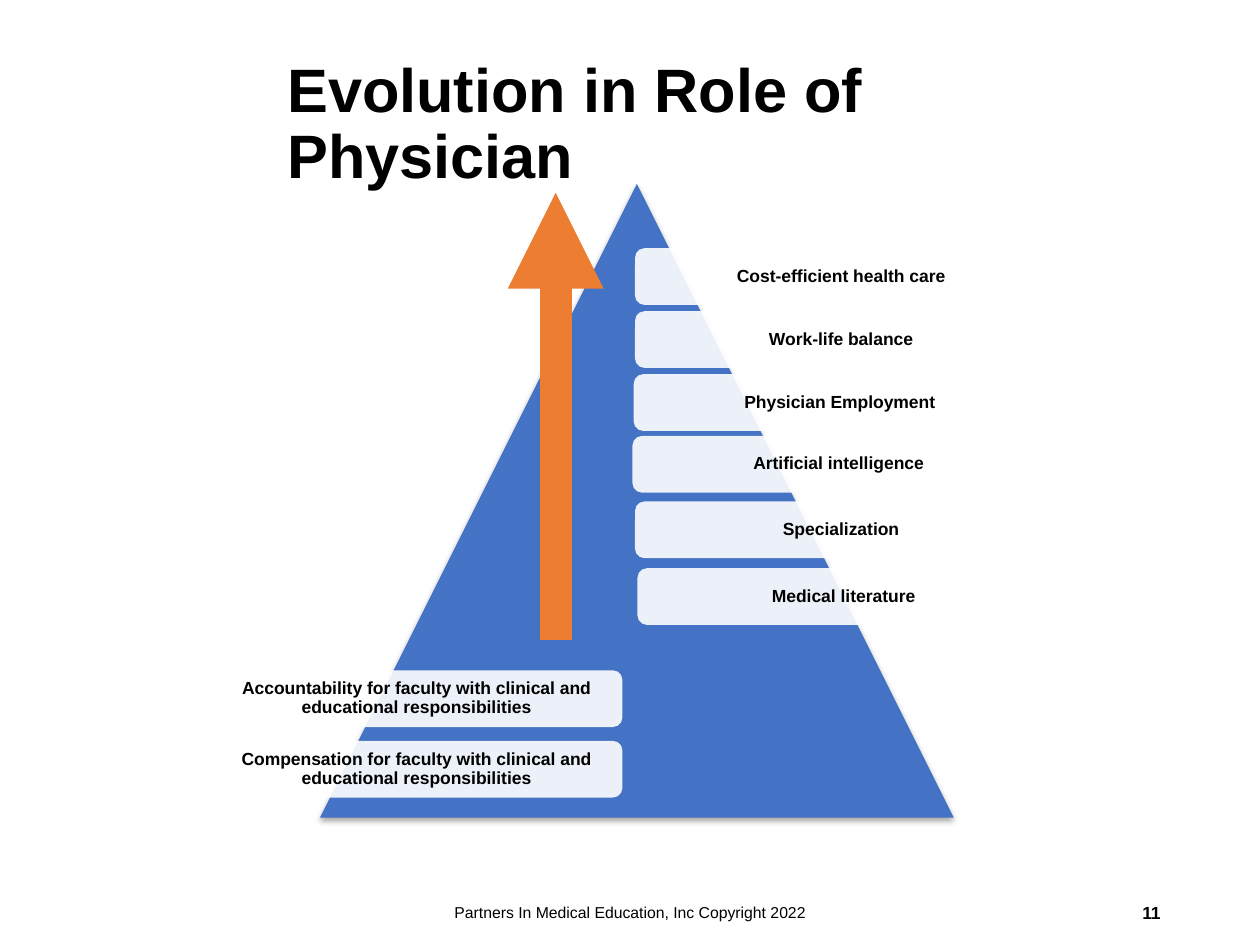
from lxml.etree import SubElement
from pptx import Presentation
from pptx.dml.color import RGBColor
from pptx.enum.shapes import MSO_CONNECTOR, MSO_SHAPE
from pptx.enum.text import MSO_ANCHOR, PP_ALIGN
from pptx.oxml.ns import qn
from pptx.util import Inches, Pt

COLORS = {"ink": "000000", "blue": "4472C4", "card": "FFFFFF", "arrow": "ED7D31"}

# Tops and lefts of the cards, relative to the pyramid's box
RIGHT = [
    ("Cost-efficient health care", 2.5, 0.51),
    ("Work-life balance", 2.5, 1.01),
    ("Physician Employment", 2.49, 1.51),
    ("Artificial intelligence", 2.48, 2.0),
    ("Specialization", 2.5, 2.52),
    ("Medical literature", 2.52, 3.05),
]
LEFT = [
    ("Accountability for faculty with clinical and educational responsibilities", -0.87, 3.86),
    ("Compensation for faculty with clinical and educational responsibilities", -0.87, 4.42),
]


def color(name):
    return RGBColor.from_string(COLORS[name])


def inches(*sizes):
    return [Inches(size) for size in sizes]


def add(parent, tag, **attrs):
    return SubElement(parent, qn(tag), {key: str(val) for key, val in attrs.items()})


def write(shape, text, size=10, bold=True, align=PP_ALIGN.CENTER, pads=(0.1, 0.05, 0.1, 0.05), space=None):
    frame = shape.text_frame
    frame.word_wrap = True
    frame.vertical_anchor = MSO_ANCHOR.MIDDLE
    (frame.margin_left, frame.margin_top,
     frame.margin_right, frame.margin_bottom) = inches(*pads)
    para = frame.paragraphs[0]
    para.alignment = align
    para.line_spacing = space
    run = para.add_run()
    run.text = text
    font = run.font
    font.name, font.size, font.bold = "Arial", Pt(size), bold
    font.color.rgb = color("ink")


def draw(slide, kind, box, fill):
    shape = slide.shapes.add_shape(kind, *inches(*box))
    shape.shadow.inherit = False
    shape.fill.solid()
    shape.fill.fore_color.rgb = color(fill)
    shape.line.fill.background()
    return shape


def add_title(slide, box):
    title = slide.shapes.title
    title.left, title.top, title.width, title.height = inches(*box)
    write(title, "Evolution in Role of Physician", size=35, align=PP_ALIGN.LEFT,
          pads=(0.1, 0.05, 0.6, 0.05), space=0.9)


def add_card(slide, box, text):
    card = draw(slide, MSO_SHAPE.ROUNDED_RECTANGLE, box, "card")
    tint = card.fill._xPr.find(qn("a:solidFill"))[0]
    add(tint, "a:alpha", val=90000)
    write(card, text, pads=(0.06,) * 4, space=0.9)


def add_pyramid(slide, box):
    left, top = box[:2]
    base = draw(slide, MSO_SHAPE.ISOSCELES_TRIANGLE, box, "blue")
    # Soft shadow under the pyramid
    effects = base._element.spPr.find(qn("a:effectLst"))
    shade = add(effects, "a:outerShdw", blurRad=Pt(3.1), dist=Pt(1.8),
                dir=5400000, rotWithShape=0)
    add(add(shade, "a:srgbClr", val=COLORS["ink"]), "a:alpha", val=35000)
    for text, x, y in RIGHT + LEFT:
        add_card(slide, (left + x, top + y, 3.27, 0.45), text)


def add_arrow(slide, box):
    left, top, width, height = box
    mid = left + width / 2
    arrow = slide.shapes.add_connector(
        MSO_CONNECTOR.STRAIGHT, *inches(mid, top + height, mid, top))
    arrow.line.color.rgb = color("arrow")
    arrow.line.width = Pt(18.25)
    add(arrow.line._get_or_add_ln(), "a:tailEnd", type="triangle")
    add(arrow._element.spPr, "a:effectLst")


def add_footer(slide, box):
    left, top, width, height = box
    note = slide.shapes.add_textbox(*inches(left, top, 3.38, height))
    write(note, "Partners In Medical Education, Inc Copyright 2022", size=9, bold=False)
    page = slide.shapes.add_textbox(*inches(left + width - 2.25, top, 2.25, height))
    write(page, "11", align=PP_ALIGN.RIGHT)


def main():
    deck = Presentation()
    deck.slide_width, deck.slide_height = inches(10, 7.5)
    slide = deck.slides.add_slide(deck.slide_layouts[5])
    add_title(slide, (2.18, 0.27, 7.14, 1.45))
    add_footer(slide, (3.31, 7.04, 6, 0.4))
    add_pyramid(slide, (2.54, 1.46, 5.03, 5.03))
    add_arrow(slide, (4.03, 1.53, 0.76, 3.55))
    deck.save("out.pptx")


if __name__ == "__main__":
    main()
